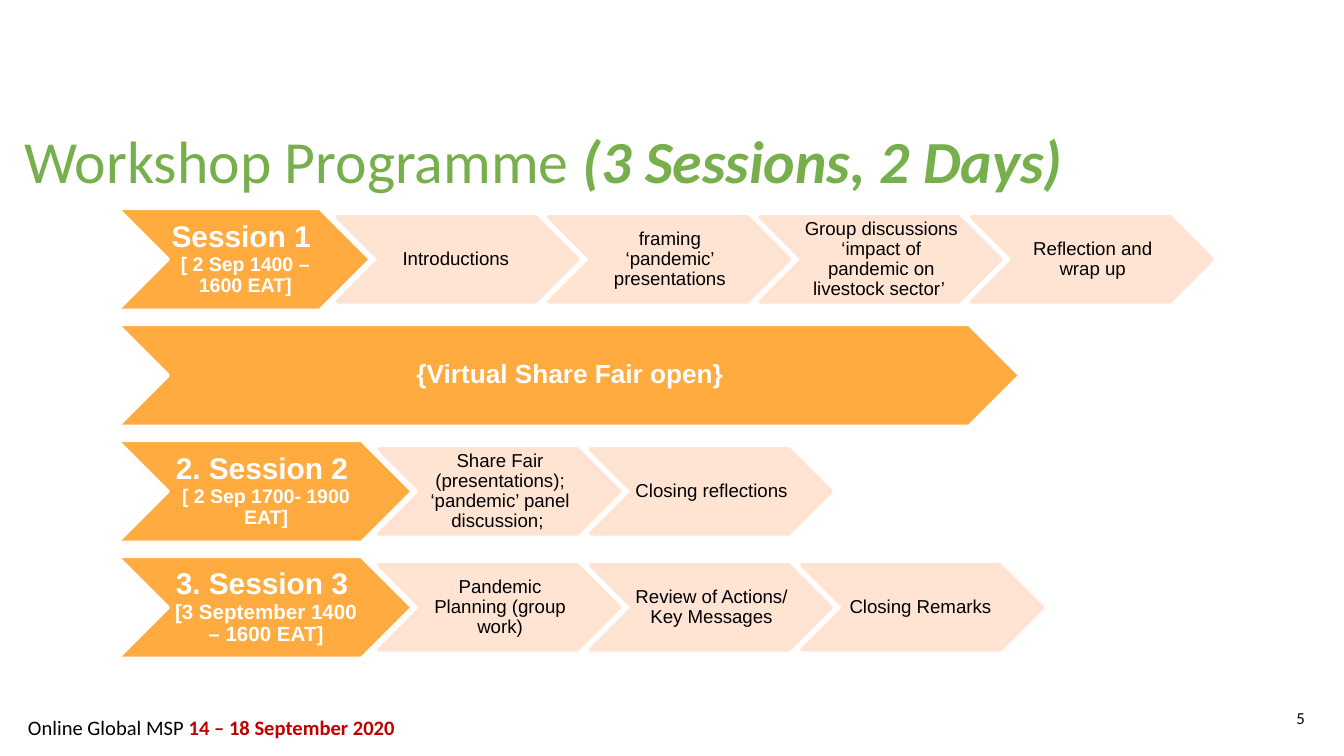
from lxml import etree
from pptx import Presentation
from pptx.dml.color import RGBColor
from pptx.enum.shapes import MSO_SHAPE as Shape
from pptx.enum.text import MSO_ANCHOR as Anchor, PP_ALIGN as Align
from pptx.oxml.ns import qn
from pptx.util import Inches, Pt

ORANGE, PEACH = "FFAB40", "FFE2CF"
WHITE, BLACK, GREEN, RED = "FFFFFF", "000000", "77AF4D", "C00000"

SESSION_H, STEP_W, STEP_H = 0.76, 1.79, 0.63
STEP_PITCH = (7.23 - 2.51) / 3
ROW_PITCH = (4.14 - 1.55) / 3
OVERLAP = 0.25  # how far the first step reaches into its session

# Each row: session width, lines of (text, size), steps
ROWS = [
    (1.89, [("Session 1 ", 16), ("[ 2 Sep 1400 – 1600 EAT]", 10.5)],
     ["Introductions ", "framing ‘pandemic’ presentations",
      "Group discussions ‘impact of pandemic on livestock sector’ ",
      "Reflection and wrap up"]),
    (6.72, [("{Virtual Share Fair open}", 14)], []),
    (2.2, [("2. Session 2 ", 16), ("[ 2 Sep 1700- 1900 EAT]", 10.5)],
     ["Share Fair (presentations); ‘pandemic’ panel discussion; ",
      "Closing reflections "]),
    (2.2, [("3. Session 3 ", 16), ("[3 September 1400 – 1600 EAT]", 11)],
     ["Pandemic Planning (group work)", "Review of Actions/ Key Messages",
      "Closing Remarks "]),
]


def color(value):
    return RGBColor.from_string(value)


def add_span(para, text, size, tint, font, bold=False, italic=False):
    span = para.add_run()
    span.text = text
    span.font.name, span.font.size = font, Pt(size)
    span.font.bold, span.font.italic = bold, italic
    span.font.color.rgb = color(tint)


def set_frame(frame, anchor, left=0, top=0, right=0, bottom=0):
    frame.word_wrap = True
    frame.vertical_anchor = anchor
    frame.margin_left, frame.margin_right = Inches(left), Inches(right)
    frame.margin_top, frame.margin_bottom = Inches(top), Inches(bottom)
    return frame.paragraphs[0]


def set_alpha(shape, percent):
    for tint in shape._element.spPr.iter(qn("a:srgbClr")):
        etree.SubElement(tint, qn("a:alpha")).set("val", str(percent * 1000))


def add_chevron(page, left, top, width, height, fill, line, inset):
    shape = page.shapes.add_shape(Shape.CHEVRON, Inches(left), Inches(top),
                                  Inches(width), Inches(height))
    shape.shadow.inherit = False
    shape.fill.solid()
    shape.fill.fore_color.rgb = color(fill)
    shape.line.color.rgb = color(line)
    shape.line.width = Pt(2)
    para = set_frame(shape.text_frame, Anchor.MIDDLE, inset, 0.01, 0, 0.01)
    para.alignment, para.line_spacing = Align.CENTER, 0.9
    return shape, para


def add_session_row(page, left, top, width, lines, steps):
    # Session heading
    _, para = add_chevron(page, left, top, width, SESSION_H, ORANGE, WHITE, 0.02)
    for index, (text, size) in enumerate(lines):
        if index:
            para.add_line_break()
        add_span(para, text, size, WHITE, "Arial", bold=True)
    # Steps, centred on the heading
    for index, text in enumerate(steps):
        shape, para = add_chevron(
            page, left + width - OVERLAP + index * STEP_PITCH,
            top + (SESSION_H - STEP_H) / 2, STEP_W, STEP_H, PEACH, PEACH, 0.01)
        set_alpha(shape, 90)
        add_span(para, text, 10, BLACK, "Arial")


def add_programme(page, left, top):
    for index, row in enumerate(ROWS):
        add_session_row(page, left, top + index * ROW_PITCH, *row)


def add_title(page, left, top, width, height):
    title = page.shapes.title
    title.left, title.top = Inches(left), Inches(top)
    title.width, title.height = Inches(width), Inches(height)
    para = set_frame(title.text_frame, Anchor.TOP)
    para.alignment = Align.LEFT
    add_span(para, "Workshop Programme ", 32, GREEN, "Calibri")
    add_span(para, "(3 Sessions, 2 Days)", 32, GREEN, "Calibri", True, True)


def add_footer(page, left, top, width, height):
    # Page number
    box = page.shapes.add_textbox(Inches(left + width - 0.6), Inches(top),
                                  Inches(0.6), Inches(height))
    para = set_frame(box.text_frame, Anchor.MIDDLE)
    para.alignment = Align.RIGHT
    add_span(para, "5", 9, BLACK, "Calibri")
    # Event name and dates
    box = page.shapes.add_textbox(Inches(left), Inches(top + 0.14),
                                  Inches(3.36), Inches(0.29))
    para = set_frame(box.text_frame, Anchor.TOP, 0.1, 0.05, 0.1, 0.05)
    add_span(para, "Online Global MSP ", 11, BLACK, "Calibri")
    add_span(para, "14 – 18 September 2020", 11, RED, "Calibri", bold=True)


def main():
    deck = Presentation()
    deck.slide_width = Inches(10)
    deck.slide_height = deck.slide_width * 9 // 16
    page = deck.slides.add_slide(deck.slide_layouts[5])
    add_footer(page, 0.11, 5.13, 9.6, 0.43)
    add_title(page, 0.18, 0.92, 9.58, 0.63)
    add_programme(page, 0.87, 1.55)
    deck.save("out.pptx")


if __name__ == "__main__":
    main()
